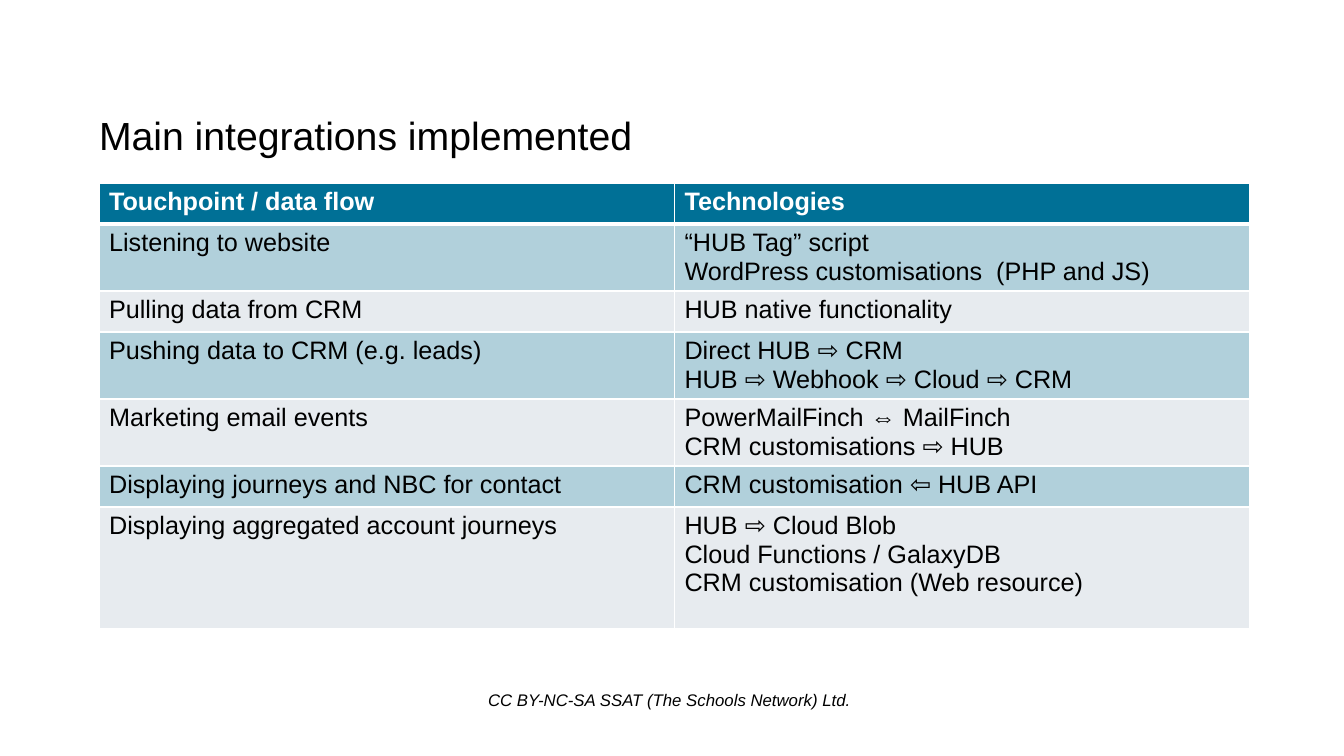
"""Build a slide with a table of the main integrations implemented."""
import pptx
import pptx.dml.color
import pptx.enum.text
import pptx.oxml
import pptx.oxml.ns
import pptx.util

PX = 12192000 / 1344
NAMESPACE = pptx.oxml.ns.nsdecls("a")
BLACK, WHITE, HEADER = "000000", "FFFFFF", "007096"
BANDS = ["E7EBEF", "B1D0DB"]
ROWS = [
    (41, "Touchpoint / data flow", "Technologies"),
    (67, "Listening to website", "“HUB Tag” script\nWordPress customisations  (PHP and JS)"),
    (41, "Pulling data from CRM", "HUB native functionality"),
    (67, "Pushing data to CRM (e.g. leads)", "Direct HUB ⇨ CRM\nHUB ⇨ Webhook ⇨ Cloud ⇨ CRM"),
    (67, "Marketing email events", "PowerMailFinch ⇔ MailFinch\nCRM customisations ⇨ HUB"),
    (41, "Displaying journeys and NBC for contact", "CRM customisation ⇦ HUB API"),
    (122, "Displaying aggregated account journeys",
     "HUB ⇨ Cloud Blob\nCloud Functions / GalaxyDB\nCRM customisation (Web resource)"),
]


def px(length):
    return pptx.util.Emu(round(length * PX))


def style_font(paragraph, color, **formats):
    paragraph.font.color.rgb = pptx.dml.color.RGBColor.from_string(color)
    for name, value in {"name": "Arial", **formats}.items():
        setattr(paragraph.font, name, value)


presentation = pptx.Presentation()
presentation.slide_width, presentation.slide_height = px(1344), px(756)
slide = presentation.slides.add_slide(presentation.slide_layouts[5])

title = slide.shapes.title
footer = slide.shapes.add_textbox(0, 0, 0, 0)
LEFT = pptx.enum.text.PP_ALIGN.LEFT
CENTER = pptx.enum.text.PP_ALIGN.CENTER
texts = [
    (title, "Main integrations implemented", (99, 59, 1151, 99), (0, 0, 0, 0), LEFT,
     {"size": pptx.util.Pt(28)}),
    (footer, "CC BY-NC-SA SSAT (The Schools Network) Ltd.", (466, 671, 417, 39), (0, 5, 10, 0), CENTER,
     {"size": pptx.util.Pt(12), "italic": True}),
]
for shape, text, box, insets, alignment, formats in texts:
    for name, value in zip(("left", "top", "width", "height"), box):
        setattr(shape, name, px(value))
    frame = shape.text_frame
    for side, value in zip(("left", "top", "right", "bottom"), insets):
        setattr(frame, f"margin_{side}", px(value))
    frame.word_wrap = True
    frame.auto_size = pptx.enum.text.MSO_AUTO_SIZE.NONE
    frame.vertical_anchor = pptx.enum.text.MSO_ANCHOR.BOTTOM
    frame.text = text
    paragraph = frame.paragraphs[0]
    paragraph.alignment = alignment
    paragraph.line_spacing = 1.3
    style_font(paragraph, BLACK, **formats)

table_height = sum(row[0] for row in ROWS)
table = slide.shapes.add_table(len(ROWS), 2, px(99), px(183), px(1151), px(table_height)).table
for row_index, (height, *cell_texts) in enumerate(ROWS):
    table.rows[row_index].height = px(height)
    is_header = row_index == 0
    fill_color = HEADER if is_header else BANDS[row_index % 2]
    for column_index, text in enumerate(cell_texts):
        cell = table.cell(row_index, column_index)
        properties = cell._tc.get_or_add_tcPr()
        for side in "LRTB":
            thick = (row_index, side) in ((0, "B"), (1, "T"))
            width = pptx.util.Pt(3 if thick else 1)
            properties.append(pptx.oxml.parse_xml(
                f'<a:ln{side} {NAMESPACE} w="{width}"><a:solidFill>'
                f'<a:srgbClr val="{WHITE}"/></a:solidFill></a:ln{side}>'))
        cell.fill.solid()
        cell.fill.fore_color.rgb = pptx.dml.color.RGBColor.from_string(fill_color)
        cell.text = text
        for paragraph in cell.text_frame.paragraphs:
            style_font(paragraph, WHITE if is_header else BLACK,
                       size=pptx.util.Pt(18), bold=is_header)

presentation.save("out.pptx")
